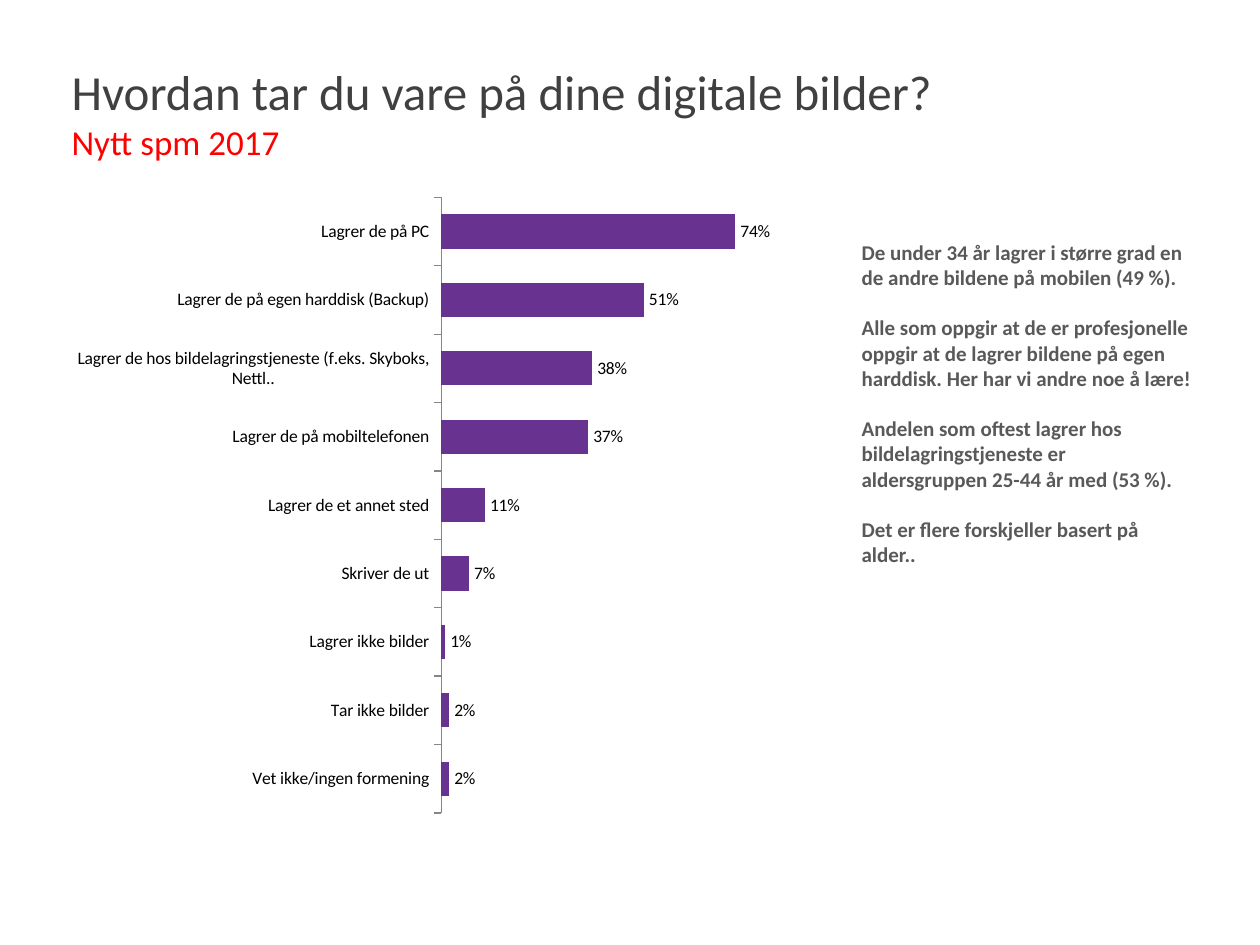
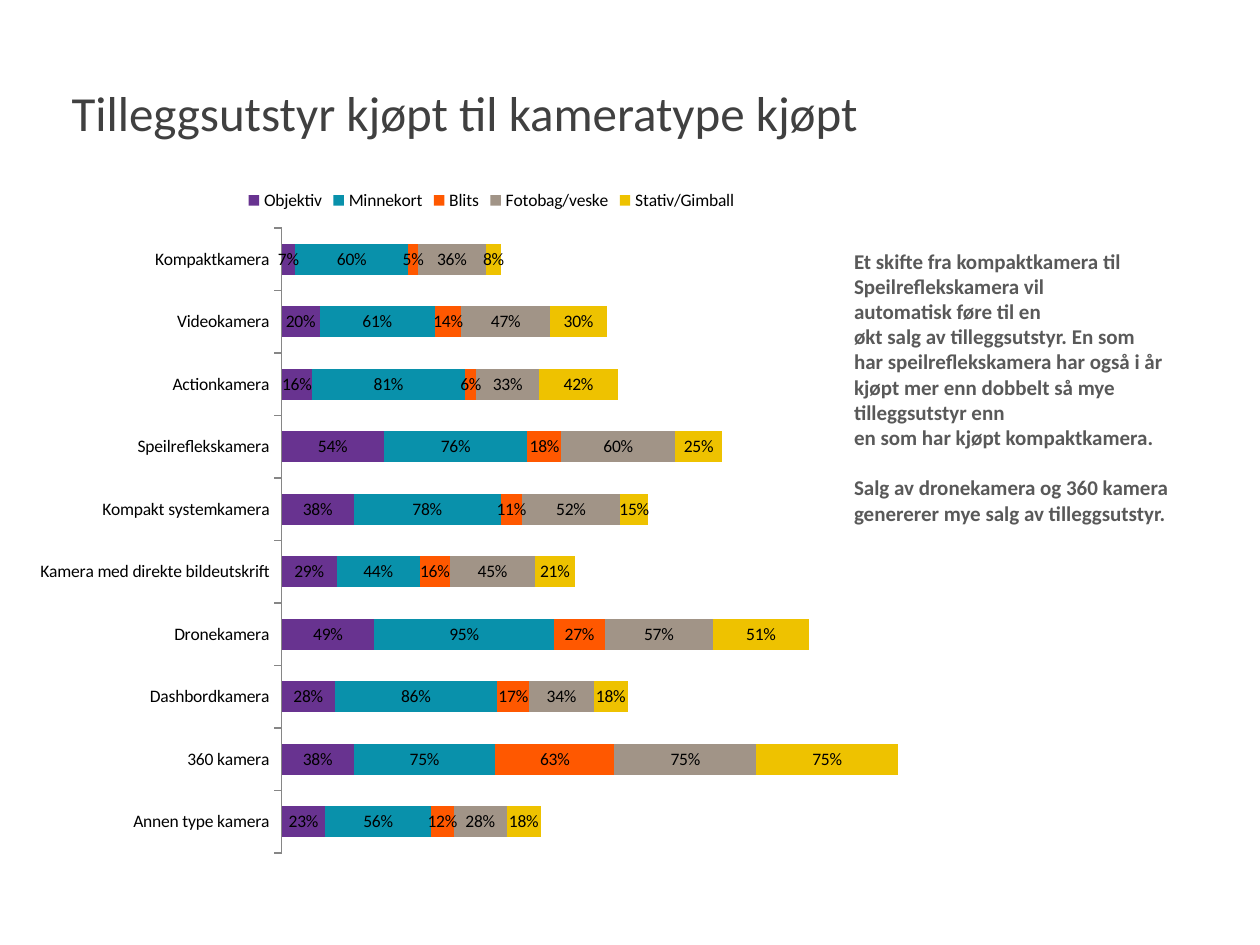
from lxml import etree
from pptx import Presentation
from pptx.chart.data import CategoryChartData
from pptx.dml.color import RGBColor
from pptx.enum.chart import XL_CHART_TYPE, XL_LABEL_POSITION, XL_LEGEND_POSITION, XL_TICK_MARK
from pptx.enum.text import MSO_ANCHOR
from pptx.oxml.ns import qn
from pptx.util import Inches, Pt

FONT = "Calibri"
DARK, GREY, RED, BLACK, AXIS = "404040", "595959", "FF0000", "000000", "868686"
PURPLE, TEAL, ORANGE, TAUPE, YELLOW = "683390", "0991AB", "FF5800", "A19487", "EEC200"
CELL = Inches(0.1)
TITLE_BOX = (4.7, 6, 90.3, 5.8)
PARAGRAPH_GAP = 14.4

STORAGE = {
    "Lagrer de på PC": 0.74,
    "Lagrer de på egen harddisk (Backup)": 0.51,
    "Lagrer de hos bildelagringstjeneste (f.eks. Skyboks, Nettl..": 0.38,
    "Lagrer de på mobiltelefonen": 0.37,
    "Lagrer de et annet sted": 0.11,
    "Skriver de ut": 0.07,
    "Lagrer ikke bilder": 0.01,
    "Tar ikke bilder": 0.02,
    "Vet ikke/ingen formening": 0.02,
}
STORAGE_NOTES = [
    ["De under 34 år lagrer i større grad en de andre bildene på mobilen (49 %)."],
    ["Alle som oppgir at de er profesjonelle oppgir at de lagrer bildene på egen "
     "harddisk. Her har vi andre noe å lære!"],
    ["Andelen som oftest lagrer hos bildelagringstjeneste er aldersgruppen "
     "25-44 år med (53 %)."],
    ["Det er flere forskjeller basert på alder.."],
]

CAMERAS = ["Kompaktkamera", "Videokamera", "Actionkamera", "Speilreflekskamera",
           "Kompakt systemkamera", "Kamera med direkte bildeutskrift", "Dronekamera",
           "Dashbordkamera", "360 kamera", "Annen type kamera"]
EQUIPMENT = [
    ("Objektiv", PURPLE, (0.07, 0.2, 0.16, 0.54, 0.38, 0.29, 0.49, 0.28, 0.38, 0.23)),
    ("Minnekort", TEAL, (0.6, 0.61, 0.81, 0.76, 0.78, 0.44, 0.95, 0.86, 0.75, 0.56)),
    ("Blits", ORANGE, (0.05, 0.14, 0.06, 0.18, 0.11, 0.16, 0.27, 0.17, 0.63, 0.12)),
    ("Fotobag/veske", TAUPE, (0.36, 0.47, 0.33, 0.6, 0.52, 0.45, 0.57, 0.34, 0.75, 0.28)),
    ("Stativ/Gimball", YELLOW, (0.08, 0.3, 0.42, 0.25, 0.15, 0.21, 0.51, 0.18, 0.75, 0.18)),
]
EQUIPMENT_NOTES = [
    ["Et skifte fra kompaktkamera til",
     "Speilreflekskamera vil",
     "automatisk føre til en",
     "økt salg av tilleggsutstyr. En som",
     "har speilreflekskamera har også i år kjøpt mer enn dobbelt så mye tilleggsutstyr enn",
     "en som har kjøpt kompaktkamera."],
    ["Salg av dronekamera og 360 kamera genererer mye salg av tilleggsutstyr."],
]


def rgb(color):
    return RGBColor.from_string(color)


def on_grid(box):
    return [int(CELL * v) for v in box]


def style(font, size, color, bold=False):
    font.name = FONT
    font.size = Pt(size)
    font.bold = bold
    font.color.rgb = rgb(color)


def add_text(slide, box):
    tf = slide.shapes.add_textbox(*on_grid(box)).text_frame
    tf.word_wrap = True
    return tf


def add_title(slide, box, title, subtitle=None):
    tf = add_text(slide, box)
    tf.vertical_anchor = MSO_ANCHOR.MIDDLE
    p = tf.paragraphs[0]
    p.text = title
    style(p.runs[0].font, 28, DARK)
    if subtitle:
        p.add_line_break()
        r = p.add_run()
        r.text = subtitle
        style(r.font, 20, RED)


def add_notes(slide, box, blocks):
    tf = add_text(slide, box)
    tf.text = "\n".join(line for block in blocks for line in block)
    starts = {sum(map(len, blocks[:i])) for i in range(1, len(blocks))}
    for i, p in enumerate(tf.paragraphs):
        if i in starts:
            p.space_before = Pt(PARAGRAPH_GAP)
        style(p.runs[0].font, 12, GREY, True)


def set_plot_area(chart, percents):
    area = chart.plots[0]._element.getparent()
    for old in area.findall(qn("c:layout")):
        area.remove(old)
    layout = etree.Element(qn("c:layout"))
    area.insert(0, layout)
    manual = etree.SubElement(layout, qn("c:manualLayout"))
    settings = [("layoutTarget", "inner"), ("xMode", "edge"), ("yMode", "edge")]
    settings += [(tag, str(v / 100)) for tag, v in zip("xywh", percents)]
    for tag, value in settings:
        etree.SubElement(manual, qn(f"c:{tag}")).set("val", value)


def add_bars(slide, box, kind, categories, series, overlap, maximum, plot_area, label_position):
    data = CategoryChartData(number_format="0%")
    data.categories = categories
    for name, _, values in series:
        data.add_series(name, values)
    chart = slide.shapes.add_chart(kind, *on_grid(box), data).chart
    style(chart.font, 10, BLACK)
    chart.has_title = False
    chart.has_legend = len(series) > 1
    if chart.has_legend:
        chart.legend.position = XL_LEGEND_POSITION.TOP
        chart.legend.include_in_layout = False

    axis = chart.category_axis
    axis.reverse_order = True
    axis.major_tick_mark = XL_TICK_MARK.OUTSIDE
    axis.format.line.color.rgb = rgb(AXIS)
    values_axis = chart.value_axis
    values_axis.visible = False
    values_axis.has_major_gridlines = False
    values_axis.minimum_scale = 0
    values_axis.maximum_scale = maximum

    plot = chart.plots[0]
    plot.gap_width = 100
    plot.overlap = overlap
    plot.vary_by_categories = False
    for s, (_, color, _) in zip(plot.series, series):
        s.format.fill.solid()
        s.format.fill.fore_color.rgb = rgb(color)
        labels = s.data_labels
        labels.show_value = True
        labels.number_format = "0%"
        labels.number_format_is_linked = False
        labels.position = label_position
        style(labels.font, 10, BLACK)
    set_plot_area(chart, plot_area)


def add_storage_slide(slide):
    add_title(slide, TITLE_BOX, "Hvordan tar du vare på dine digitale bilder?", "Nytt spm 2017")
    add_bars(slide, (4.7, 14.7, 56.7, 50.9), XL_CHART_TYPE.BAR_CLUSTERED, list(STORAGE),
             [("Series 1", PURPLE, list(STORAGE.values()))], -10, 0.8,
             (53.5, 1.9, 44.5, 96), XL_LABEL_POSITION.OUTSIDE_END)
    add_notes(slide, (67.4, 18.5, 28.5, 31.3), STORAGE_NOTES)


def add_equipment_slide(slide):
    add_bars(slide, (1.7, 14, 74.6, 54.8), XL_CHART_TYPE.BAR_STACKED, CAMERAS,
             EQUIPMENT, 100, 3.5, (27.7, 7.5, 70.4, 90.5), XL_LABEL_POSITION.CENTER)
    add_title(slide, TITLE_BOX, "Tilleggsutstyr kjøpt til kameratype kjøpt")
    add_notes(slide, (66.8, 19.2, 30, 25.2), EQUIPMENT_NOTES)


def main():
    prs = Presentation()
    prs.slide_width, prs.slide_height = Inches(10), Inches(7.5)
    for build in (add_storage_slide, add_equipment_slide):
        build(prs.slides.add_slide(prs.slide_layouts[6]))
    prs.save("out.pptx")


if __name__ == "__main__":
    main()
